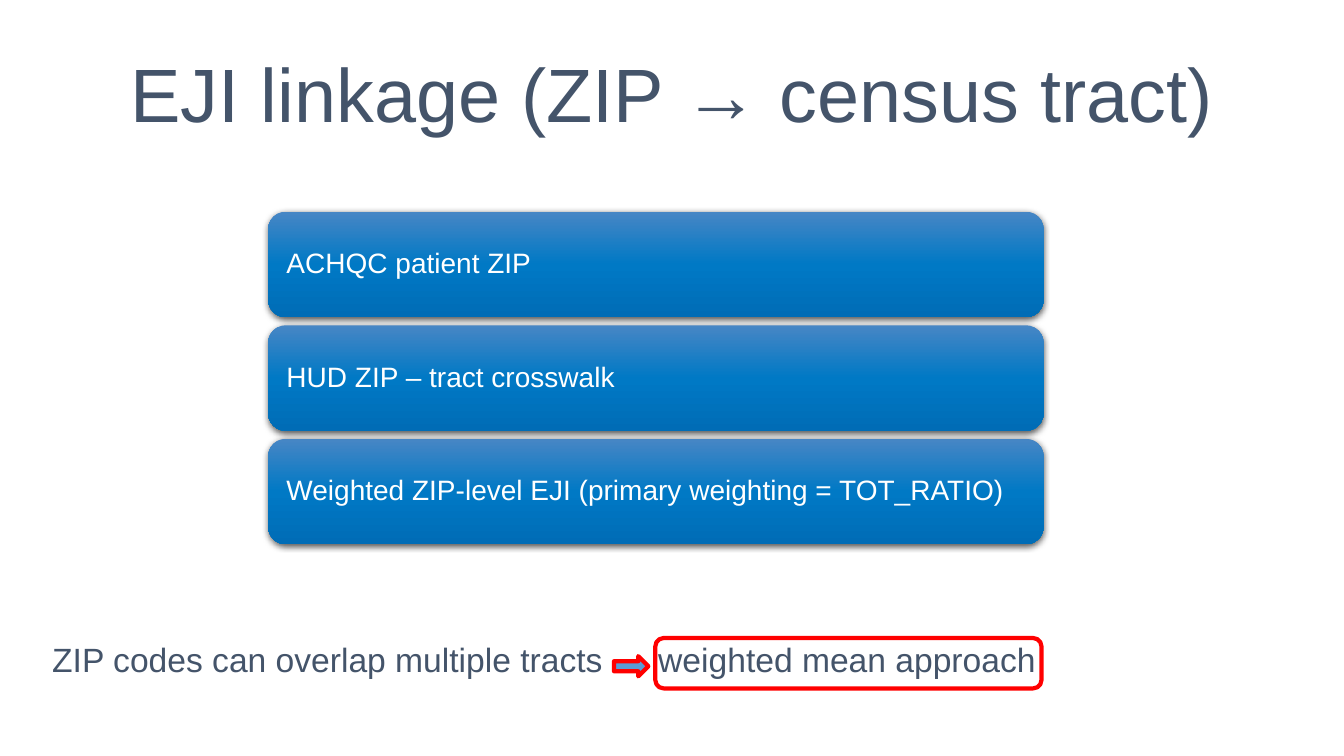
from lxml import etree
from pptx import Presentation
from pptx.dml.color import RGBColor as RGB
from pptx.enum.shapes import MSO_SHAPE as SHAPE
from pptx.enum.text import MSO_ANCHOR as ANCHOR, PP_ALIGN as ALIGN
from pptx.oxml import parse_xml
from pptx.oxml.ns import nsdecls, qn
from pptx.util import Inches, Pt

COLORS = {"ink": "44546A", "white": "FFFFFF", "red": "FF0000", "arrow": "5B9BD5",
          "top": "4786C5", "mid": "0079C5", "low": "006CB6", "shade": "000000"}
STEPS = ["ACHQC patient ZIP", "HUD ZIP – tract crosswalk",
         "Weighted ZIP-level EJI (primary weighting = TOT_RATIO)"]


def color(name):
    """Return the named colour."""
    return RGB.from_string(COLORS[name])


def write(shape, text, size, ink, align=ALIGN.LEFT, anchor=ANCHOR.MIDDLE, tab=None):
    """Put one styled paragraph in a shape."""
    frame = shape.text_frame
    frame.word_wrap = True
    frame.vertical_anchor = anchor
    frame.text = text
    para = frame.paragraphs[0]
    para.alignment = align
    para.line_spacing = 0.9
    if tab:
        tabs = etree.SubElement(para._p.get_or_add_pPr(), qn("a:tabLst"))
        etree.SubElement(tabs, qn("a:tab"), pos=str(Inches(tab)), algn="l")
    for run in para.runs:
        run.font.name = "Arial"
        run.font.size = Pt(size)
        run.font.color.rgb = color(ink)


def add_box(slide, kind, x, y, w, h):
    """Add a preset shape without shadow."""
    shape = slide.shapes.add_shape(kind, Inches(x), Inches(y), Inches(w), Inches(h))
    shape.shadow.inherit = False
    return shape


def add_text(slide, x, y, w, h, text, size, **style):
    """Add a text box in the ink colour."""
    box = slide.shapes.add_textbox(Inches(x), Inches(y), Inches(w), Inches(h))
    write(box, text, size, "ink", **style)


def shade(bar):
    """Give a bar its gradient and soft shadow."""
    stops = "".join(f'<a:gs pos="{pos}"><a:srgbClr val="{COLORS[name]}"/></a:gs>'
                    for pos, name in ((0, "top"), (50000, "mid"), (100000, "low")))
    props = bar._element.spPr
    bar.line.fill.background()
    props.find(qn("a:prstGeom")).addnext(parse_xml(
        f'<a:gradFill {nsdecls("a")} rotWithShape="1"><a:gsLst>{stops}</a:gsLst>'
        '<a:lin ang="5400000" scaled="0"/></a:gradFill>'))
    props.find(qn("a:effectLst")).append(parse_xml(
        f'<a:outerShdw {nsdecls("a")} blurRad="{Pt(4.5)}" dist="{Pt(1.5)}" dir="5400000" '
        f'rotWithShape="0"><a:srgbClr val="{COLORS["shade"]}"><a:alpha val="63000"/>'
        '</a:srgbClr></a:outerShdw>'))


def add_steps(slide, x, y, w, h, gap):
    """Stack one rounded bar per step within the box."""
    size = (h - gap * (len(STEPS) - 1)) / len(STEPS)
    for row, step in enumerate(STEPS):
        bar = add_box(slide, SHAPE.ROUNDED_RECTANGLE, x, y + row * (size + gap), w, size)
        shade(bar)
        write(bar, step, 20, "white")
        bar.text_frame.margin_left = bar.text_frame.margin_right = Inches(0.13)


def add_note(slide, x, y, w, h):
    """Add the closing line with its arrow and red frame."""
    add_text(slide, x, y, w, h, "ZIP codes can overlap multiple tracts\tweighted mean approach",
             24, anchor=ANCHOR.TOP, tab=6.01)
    arrow = add_box(slide, SHAPE.RIGHT_ARROW, x + 5.67, y + 0.18, 0.34, 0.2)
    arrow.fill.solid()
    arrow.fill.fore_color.rgb = color("arrow")
    ring = add_box(slide, SHAPE.ROUNDED_RECTANGLE, x + 6.08, y, 3.83, 0.5)
    ring.fill.background()
    for shape in (arrow, ring):
        shape.line.color.rgb = color("red")
        shape.line.width = Pt(3)


def main():
    """Build and save the slide."""
    deck = Presentation()
    deck.slide_width, deck.slide_height = Inches(13.33), Inches(7.5)
    slide = deck.slides.add_slide(deck.slide_layouts[6])
    add_text(slide, 0, 0.25, 13.33, 1.45, "EJI linkage (ZIP → census tract)", 54,
             align=ALIGN.CENTER)
    add_steps(slide, 2.66, 2.1, 7.69, 3.3, 0.08)
    add_note(slide, 0.42, 6.33, 10, 0.58)
    deck.save("out.pptx")


if __name__ == "__main__":
    main()
